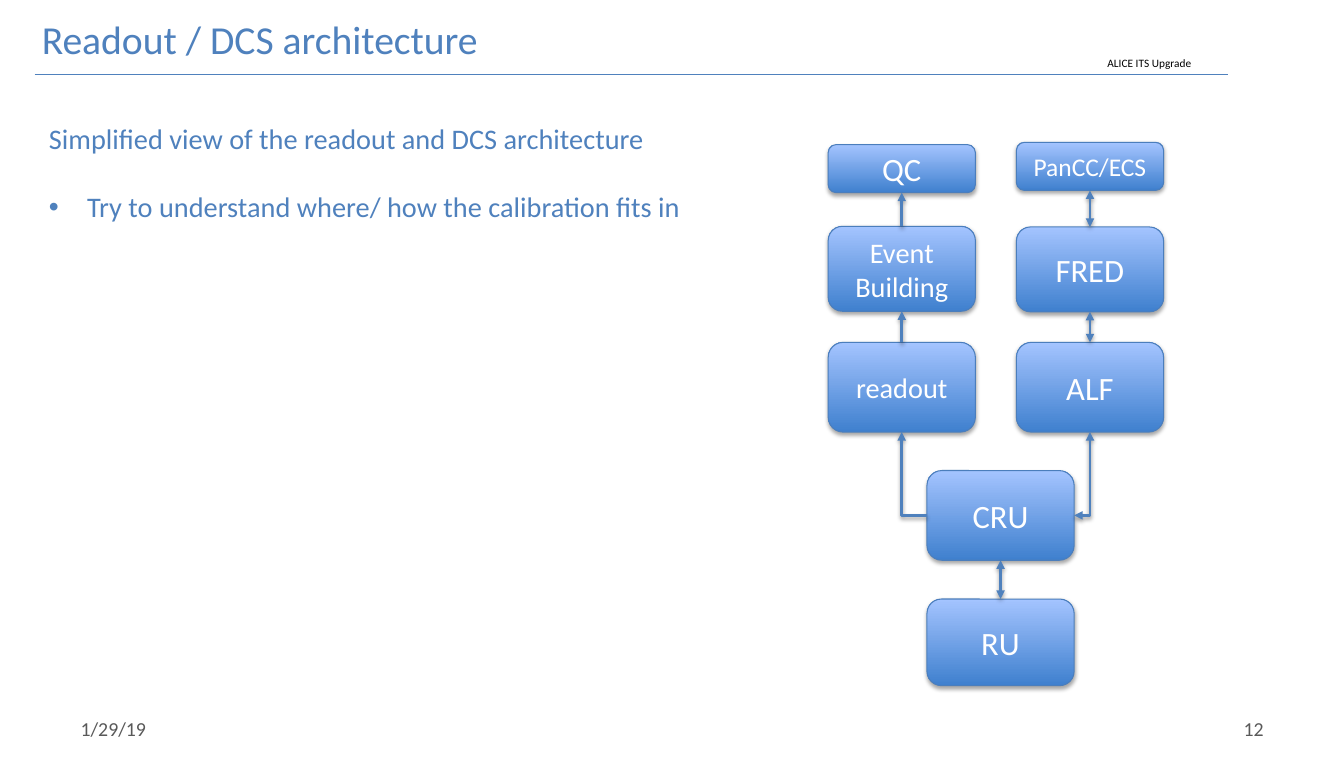
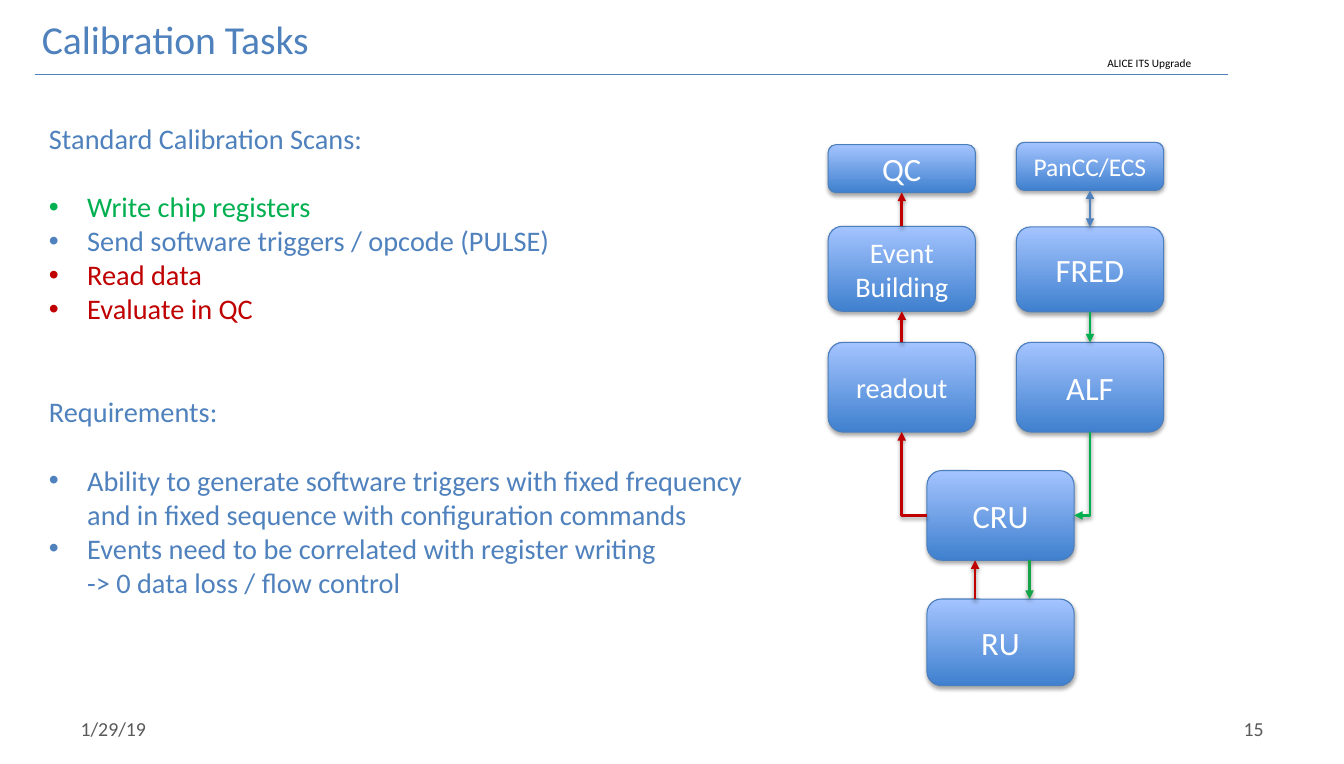
from copy import deepcopy
from dataclasses import dataclass

from lxml.etree import SubElement
from pptx import Presentation
from pptx.dml.color import RGBColor
from pptx.enum.shapes import MSO_CONNECTOR, MSO_SHAPE
from pptx.enum.text import MSO_ANCHOR, MSO_AUTO_SIZE, PP_ALIGN
from pptx.oxml.ns import qn
from pptx.util import Pt


@dataclass(frozen=True)
class Theme:
    font: str = "Calibri"
    blue: str = "4F81BD"
    green: str = "00B050"
    leaf: str = "15A548"
    red: str = "C00000"
    grey: str = "595959"
    black: str = "000000"
    white: str = "FFFFFF"
    box_edge: str = "4B7EBC"
    box_low: str = "3F80CE"
    box_high: str = "A4C4FF"
    title: int = 28
    body: int = 20
    footer: int = 14
    caption: int = 8
    box: int = 23


theme = Theme()


def write(para, text, size=theme.body, color=theme.blue, align=PP_ALIGN.LEFT, before=0):
    para.text = text
    para.alignment = align
    para.space_before = Pt(before)
    for span in para.runs:
        span.font.name = theme.font
        span.font.size = Pt(size)
        span.font.color.rgb = RGBColor.from_string(color)


def cast_shadow(shape, opacity, distance):
    effects = SubElement(shape._element.spPr, qn("a:effectLst"))
    shadow = SubElement(effects, qn("a:outerShdw"), blurRad=str(Pt(3.1)), dist=str(Pt(distance)),
                        dir="5400000", rotWithShape="0")
    color = SubElement(shadow, qn("a:srgbClr"), val=theme.black)
    SubElement(color, qn("a:alpha"), val=str(opacity * 1000))


deck = Presentation()
deck.slide_width, deck.slide_height = Pt(949.7), Pt(540)
layout = deck.slide_layouts[1]

# Shared layout: placeholder places and body text size
TITLE, BODY, DATE, NUMBER = 0, 1, 10, 12
places = {
    TITLE: (22.3, 7.2, 730, 41, MSO_ANCHOR.TOP),
    BODY: (27.4, 82, 545, 366, MSO_ANCHOR.TOP),
    DATE: (47.5, 500.4, 222, 29, MSO_ANCHOR.MIDDLE),
    NUMBER: (680.4, 500.4, 222, 29, MSO_ANCHOR.MIDDLE),
}
for holder in layout.placeholders:
    index = holder.placeholder_format.idx
    if index not in places:
        continue
    left, top, width, height, anchor = places[index]
    holder.left, holder.top, holder.width, holder.height = Pt(left), Pt(top), Pt(width), Pt(height)
    frame = holder.text_frame
    frame.auto_size = MSO_AUTO_SIZE.NONE
    frame.vertical_anchor = anchor
    if index in (DATE, NUMBER):
        frame.margin_left = frame.margin_right = Pt(9.4)
        frame.margin_top = frame.margin_bottom = Pt(4.3)
body_style = deck.slide_master.element.find(".//" + qn("p:bodyStyle"))
body_style.find(qn("a:lvl1pPr")).find(qn("a:defRPr")).set("sz", str(theme.body * 100))

# Diagram boxes: name, left, top, height, type size
READOUT_X, CENTRE_X, CONTROL_X, BOX_WIDTH = 585.2, 655, 718.2, 104
boxes = [
    ("RU", CENTRE_X, 423.4, 61.2, theme.box),
    ("CRU", CENTRE_X, 332.6, 63.4, theme.box),
    ("readout", READOUT_X, 242, 63.4, 20),
    ("ALF", CONTROL_X, 242, 63.4, theme.box),
    ("Event Building", READOUT_X, 160, 60, 20),
    ("FRED", CONTROL_X, 160.4, 60, theme.box),
    ("QC", READOUT_X, 102.2, 34, theme.box),
    ("PanCC/ECS", CONTROL_X, 100.6, 34, 18),
]

# Arrows run from the lower box to the upper one: lower, upper, colour, arrowheads, shift
DOWN, UP, BOTH = ["headEnd"], ["tailEnd"], ["headEnd", "tailEnd"]
TOP, LEFT, BOTTOM, RIGHT = range(4)
GAP = 24.4
slides = [
    {
        "title": "Readout / DCS architecture",
        "number": "12",
        "body": [  # text, bullet, colour, space before
            ("Simplified view of the readout and DCS architecture", False, theme.blue, 0),
            ("Try to understand where/ how the calibration fits in", True, theme.blue, GAP),
        ],
        "arrows": [
            ("RU", "CRU", theme.blue, BOTH, 0),
            ("CRU", "ALF", theme.blue, BOTH, 0),
            ("CRU", "readout", theme.blue, UP, 0),
            ("readout", "Event Building", theme.blue, UP, 0),
            ("Event Building", "QC", theme.blue, UP, 0),
            ("ALF", "FRED", theme.blue, BOTH, 0),
            ("FRED", "PanCC/ECS", theme.blue, BOTH, 0),
        ],
    },
    {
        "title": "Calibration Tasks",
        "number": "15",
        "body": [
            ("Standard Calibration Scans:", False, theme.blue, 0),
            ("Write chip registers", True, theme.green, GAP),
            ("Send software triggers / opcode (PULSE)", True, theme.blue, 0),
            ("Read data", True, theme.red, 0),
            ("Evaluate in QC", True, theme.red, 0),
            ("Requirements:", False, theme.blue, 2 * GAP),
            ("Ability to generate software triggers with fixed frequency\v"
             "and in fixed sequence with configuration commands", True, theme.blue, GAP),
            ("Events need to be correlated with register writing\v"
             "-> 0 data loss / flow control", True, theme.blue, 0),
        ],
        "arrows": [
            ("CRU", "readout", theme.red, UP, 0),
            ("readout", "Event Building", theme.red, UP, 0),
            ("Event Building", "QC", theme.red, UP, 0),
            ("FRED", "PanCC/ECS", theme.blue, BOTH, 0),
            ("ALF", "FRED", theme.green, DOWN, 0),
            ("CRU", "ALF", theme.green, DOWN, 0),
            ("RU", "CRU", theme.leaf, DOWN, 20.5),
            ("RU", "CRU", theme.red, UP, -18),
        ],
    },
]

for content in slides:
    page = deck.slides.add_slide(layout)

    # Title and list
    write(page.shapes.title.text_frame.paragraphs[0], content["title"], size=theme.title)
    frame = page.placeholders[BODY].text_frame
    for position, (text, bullet, color, before) in enumerate(content["body"]):
        para = frame.add_paragraph() if position else frame.paragraphs[0]
        if not bullet:
            properties = para._p.get_or_add_pPr()
            properties.set("marL", "0")
            properties.set("indent", "0")
            SubElement(properties, qn("a:buNone"))
        write(para, text, color=color, before=before)

    # Date and page number
    for holder in layout.placeholders:
        if holder.placeholder_format.idx in (DATE, NUMBER):
            page.shapes._spTree.append(deepcopy(holder._element))
    for index, text, align in ((DATE, "1/29/19", PP_ALIGN.LEFT),
                               (NUMBER, content["number"], PP_ALIGN.RIGHT)):
        write(page.placeholders[index].text_frame.paragraphs[0], text,
              size=theme.footer, color=theme.grey, align=align)

    # Diagram boxes
    drawn = {}
    for name, left, top, height, size in boxes:
        box = page.shapes.add_shape(MSO_SHAPE.ROUNDED_RECTANGLE, Pt(left), Pt(top),
                                    Pt(BOX_WIDTH), Pt(height))
        box.fill.gradient()
        box.fill.gradient_angle = 90
        for stop, color in zip(box.fill.gradient_stops, (theme.box_low, theme.box_high)):
            stop.color.rgb = RGBColor.from_string(color)
        box.line.color.rgb = RGBColor.from_string(theme.box_edge)
        box.line.width = Pt(0.75)
        cast_shadow(box, opacity=35, distance=1.8)
        box.text_frame.vertical_anchor = MSO_ANCHOR.MIDDLE
        write(box.text_frame.paragraphs[0], name, size=size, color=theme.white,
              align=PP_ALIGN.CENTER)
        drawn[name] = box

    # Arrows
    for lower_name, upper_name, color, ends, shift in content["arrows"]:
        lower, upper = drawn[lower_name], drawn[upper_name]
        bent = lower_name == "CRU"
        x = lower.left + lower.width // 2 + Pt(shift)
        arrow = page.shapes.add_connector(MSO_CONNECTOR.ELBOW if bent else MSO_CONNECTOR.STRAIGHT,
                                          x, lower.top, x, upper.top + upper.height)
        if bent:
            arrow._element.spPr.find(qn("a:prstGeom")).set("prst", "bentConnector2")
        if not shift:
            side = LEFT if upper.left < lower.left else RIGHT
            arrow.begin_connect(lower, side if bent else TOP)
            arrow.end_connect(upper, BOTTOM)
        arrow.line.color.rgb = RGBColor.from_string(color)
        arrow.line.width = Pt(2)
        for end in ends:
            SubElement(arrow.line._get_or_add_ln(), qn("a:" + end), type="triangle")
        cast_shadow(arrow, opacity=38, distance=1.6)

# Header rule and caption, drawn on a page and moved to the shared layout
rule = page.shapes.add_connector(MSO_CONNECTOR.STRAIGHT, Pt(24.5), Pt(52.6), Pt(867.6), Pt(52.6))
rule.line.color.rgb = RGBColor.from_string(theme.blue)
rule.line.width = Pt(0.75)
SubElement(rule._element.spPr, qn("a:effectLst"))
caption = page.shapes.add_textbox(Pt(775.4), Pt(36), Pt(76), Pt(17))
caption.text_frame.word_wrap = True
write(caption.text_frame.paragraphs[0], "ALICE ITS Upgrade", size=theme.caption, color=theme.black)
for part in (rule, caption):
    layout.shapes._spTree.append(part._element)

deck.save("out.pptx")
